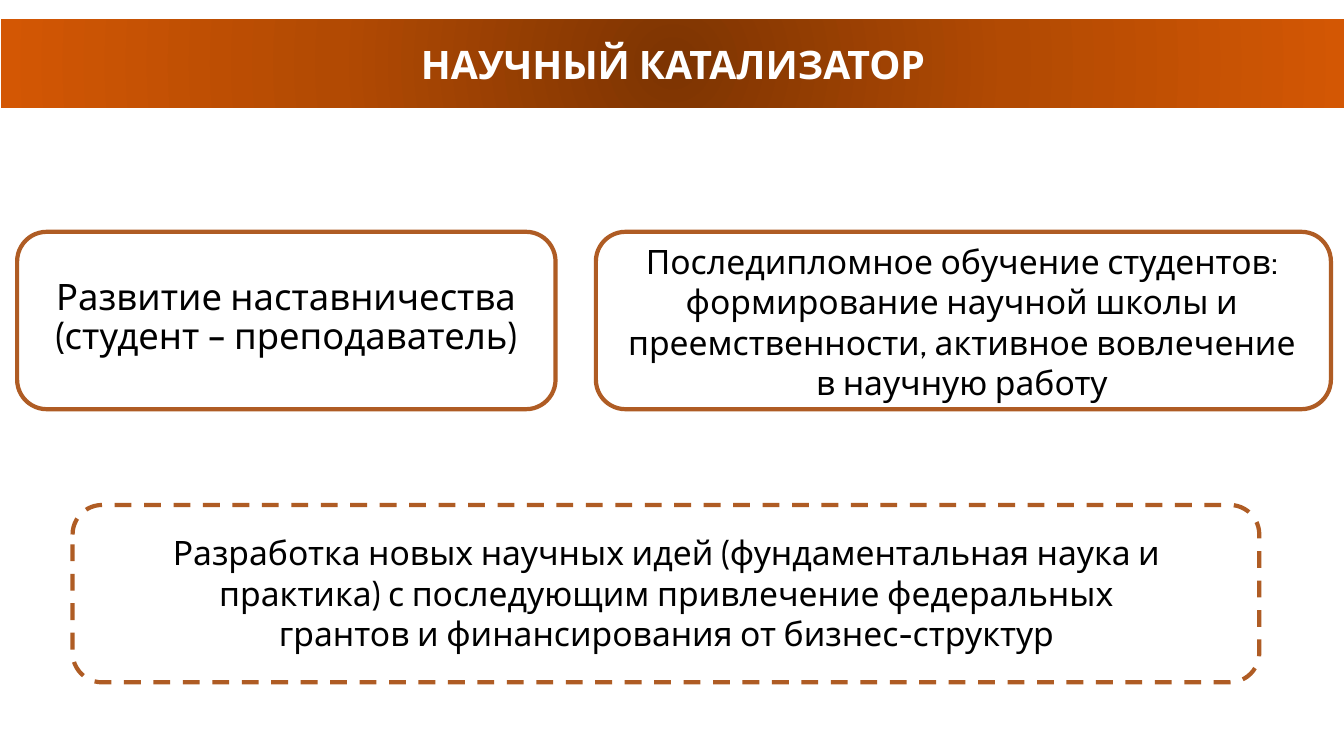
from pptx import Presentation
from pptx.dml.color import RGBColor
from pptx.enum.dml import MSO_LINE
from pptx.enum.shapes import MSO_SHAPE
from pptx.enum.text import MSO_ANCHOR, MSO_AUTO_SIZE, PP_ALIGN
from pptx.oxml import parse_xml
from pptx.oxml.ns import nsdecls, qn
from pptx.util import Inches, Pt

FONT = "Cabin"
WHITE = RGBColor(0xFF, 0xFF, 0xFF)
BLACK = RGBColor(0x00, 0x00, 0x00)
BROWN = RGBColor(0xAF, 0x5C, 0x24)
BANNER_STOPS = [
    (0, RGBColor(0x7D, 0x34, 0x02)),
    (50, RGBColor(0xB2, 0x4A, 0x03)),
    (100, RGBColor(0xD3, 0x57, 0x04)),
]
FRAME_HEIGHT = 1.76


def place(shape, left, top, width, height):
    shape.left, shape.top = Inches(left), Inches(top)
    shape.width, shape.height = Inches(width), Inches(height)


def write(shape, text, size, color=BLACK, bold=False, anchor=MSO_ANCHOR.TOP):
    """Put one centred paragraph into a shape."""
    frame = shape.text_frame
    frame.text = text
    frame.word_wrap = True
    frame.auto_size = MSO_AUTO_SIZE.NONE
    frame.vertical_anchor = anchor
    para = frame.paragraphs[0]
    para.alignment = PP_ALIGN.CENTER
    font = para.runs[0].font
    font.name, font.size, font.bold = FONT, Pt(size), bold
    font.color.rgb = color
    return para


def fill_radial(shape, stops):
    """Fill a shape with a gradient that spreads from its centre."""
    stop_xml = "".join(
        f'<a:gs pos="{percent * 1000}"><a:srgbClr val="{color}"/></a:gs>'
        for percent, color in stops
    )
    shape.fill.gradient()
    linear = shape.element.spPr.find(qn("a:gradFill"))
    radial = parse_xml(
        f'<a:gradFill {nsdecls("a")} rotWithShape="1"><a:gsLst>{stop_xml}</a:gsLst>'
        '<a:path path="circle"><a:fillToRect l="50000" t="50000" r="50000" b="50000"/>'
        "</a:path></a:gradFill>"
    )
    linear.getparent().replace(linear, radial)


def add_banner(page, text):
    title = page.shapes.title
    place(title, 0.01, 0.19, 13.33, 0.88)
    fill_radial(title, BANNER_STOPS)
    write(title, text, 28, WHITE, bold=True, anchor=MSO_ANCHOR.MIDDLE)


def fill_body(page, text):
    body = page.placeholders[1]
    place(body, 0.26, 2.72, 5.16, 1.71)
    para = write(body, text, 26)
    para.line_spacing = 0.9
    para.space_before = Pt(10)
    # No bullet and no hanging indent
    properties = para._p.get_or_add_pPr()
    properties.set("marL", "0")
    properties.set("indent", "0")
    properties.append(parse_xml(f'<a:buNone {nsdecls("a")}/>'))


def add_text(page, text, left, top, width, height):
    box = page.shapes.add_textbox(
        Inches(left), Inches(top), Inches(width), Inches(height))
    write(box, text, 24)


def add_frame(page, left, top, width, dash=None):
    frame = page.shapes.add_shape(
        MSO_SHAPE.FLOWCHART_ALTERNATE_PROCESS,
        Inches(left), Inches(top), Inches(width), Inches(FRAME_HEIGHT))
    frame.shadow.inherit = False
    frame.fill.background()
    frame.line.color.rgb = BROWN
    frame.line.width = Pt(3)
    if dash:
        frame.line.dash_style = dash


def main():
    deck = Presentation()
    deck.slide_width, deck.slide_height = Inches(13.33), Inches(7.5)
    page = deck.slides.add_slide(deck.slide_layouts[1])

    # Title and texts
    add_banner(page, "НАУЧНЫЙ КАТАЛИЗАТОР")
    fill_body(page, "Развитие наставничества (студент – преподаватель)")
    add_text(page, "Разработка новых научных идей (фундаментальная наука и практика) "
             "с последующим привлечение федеральных грантов и финансирования "
             "от бизнес-структур", 1.52, 5.23, 10.18, 1.31)
    add_text(page, "Последипломное обучение студентов: формирование научной школы и "
             "преемственности, активное вовлечение в научную работу",
             6.1, 2.34, 6.88, 1.72)

    # Rounded frames around the texts
    add_frame(page, 0.17, 2.3, 5.34)
    add_frame(page, 5.91, 2.3, 7.29)
    add_frame(page, 0.72, 5.01, 11.77, MSO_LINE.DASH)

    deck.save("out.pptx")


if __name__ == "__main__":
    main()
